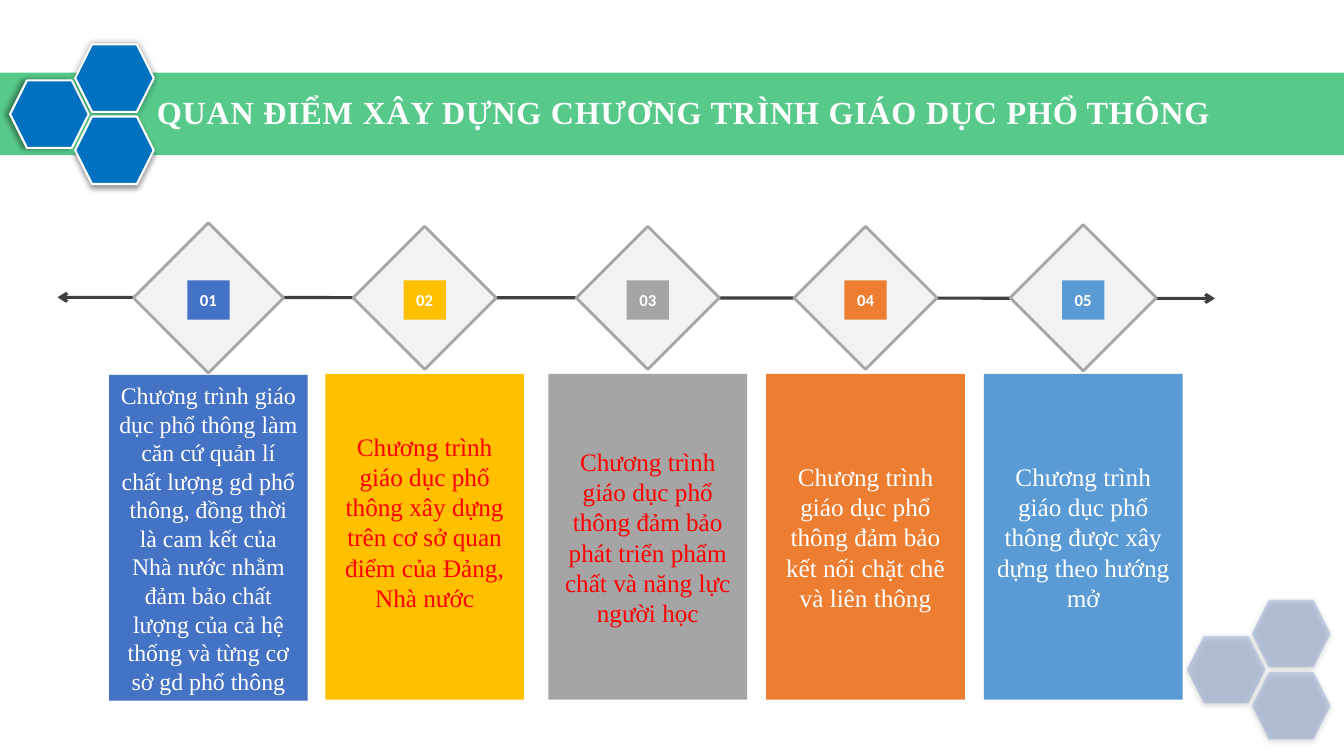
from dataclasses import dataclass
from typing import Optional

import lxml.etree
import pptx
import pptx.dml.color
import pptx.enum.shapes
import pptx.enum.text
import pptx.oxml.ns
import pptx.util

RGB = pptx.dml.color.RGBColor
SHAPE = pptx.enum.shapes.MSO_SHAPE
qn = pptx.oxml.ns.qn

WHITE = RGB(0xFF, 0xFF, 0xFF)
TITLE_WHITE = RGB(0xFE, 0xFE, 0xFE)
RED = RGB(0xFF, 0x00, 0x00)
GREEN = RGB(0x00, 0xB0, 0x50)
HEXAGON_BLUE = RGB(0x00, 0x70, 0xC0)
BLUE = RGB(0x44, 0x72, 0xC4)
GOLD = RGB(0xFF, 0xC0, 0x00)
GRAY = RGB(0xA5, 0xA5, 0xA5)
ORANGE = RGB(0xED, 0x7D, 0x31)
SKY = RGB(0x5B, 0x9B, 0xD5)
PALE = RGB(0xF2, 0xF2, 0xF2)
EDGE = RGB(0xA6, 0xA6, 0xA6)
DARK = RGB(0x40, 0x40, 0x40)

SERIF = "Times New Roman"
SANS = "Calibri"
WIDTH = pptx.util.Inches(13.33)
HEIGHT = pptx.util.Inches(7.5)


@dataclass
class Box:
    """Left, top, width and height in percent of the slide."""
    left: float
    top: float
    width: float
    height: float

    def emu(self) -> tuple[int, int, int, int]:
        return across(self.left), down(self.top), across(self.width), down(self.height)


@dataclass
class Shadow:
    alpha: int
    blur: float
    distance: float
    angle: int


@dataclass
class Hexagon:
    column: int
    row: int
    shadow: Shadow


@dataclass
class Step:
    center: float
    diamond: float
    color: RGB
    text: str
    text_color: RGB = WHITE
    size: int = 18
    top: float = 49.47
    bottom_inset: float = 0.05


SOFT = Shadow(63, 4.5, 1.5, 90)
HEADER_HEXAGONS = [
    Hexagon(0, 1, Shadow(40, 4, 3, 180)),
    Hexagon(1, 0, Shadow(40, 5, 0, 0)),
    Hexagon(1, 2, Shadow(40, 4, 3, 90)),
]
CORNER_HEXAGONS = [Hexagon(0, 1, SOFT), Hexagon(1, 0, SOFT), Hexagon(1, 2, SOFT)]

STEPS = [
    Step(15.51, 11.18, BLUE,
         "Chương trình giáo dục phổ thông làm căn cứ quản lí chất lượng gd phổ thông, "
         "đồng thời là cam kết của Nhà nước nhằm đảm bảo chất lượng của cả hệ thống "
         "và từng cơ sở gd phổ thông", size=17, top=49.6),
    Step(31.6, 10.65, GOLD,
         "Chương trình giáo dục phổ thông xây dựng trên cơ sở quan điểm của Đảng, Nhà nước",
         RED, bottom_inset=0.35),
    Step(48.2, 10.65, GRAY,
         "Chương trình giáo dục phổ thông đảm bảo phát triển phẩm chất và năng lực người học",
         RED),
    Step(64.4, 10.65, ORANGE,
         "Chương trình giáo dục phổ thông đảm bảo kết nối chặt chẽ và liên thông"),
    Step(80.6, 10.88, SKY,
         "Chương trình giáo dục phổ thông được xây dựng theo hướng mở"),
]


def across(percent: float) -> int:
    return round(WIDTH * percent / 100)


def down(percent: float) -> int:
    return round(HEIGHT * percent / 100)


def centered(x: float, y: float, width: float, height: float) -> Box:
    return Box(x - width / 2, y - height / 2, width, height)


def add_shape(shapes, kind, box: Box, fill: RGB, alpha: int = 100,
              line: Optional[RGB] = None, weight: float = 0):
    sp = shapes.add_shape(kind, *box.emu())
    sp.shadow.inherit = False
    sp.fill.solid()
    sp.fill.fore_color.rgb = fill
    if alpha < 100:
        color = sp._element.spPr.find(qn("a:solidFill")).find(qn("a:srgbClr"))
        lxml.etree.SubElement(color, qn("a:alpha"), val=str(alpha * 1000))
    if line is None:
        sp.line.fill.background()
    else:
        sp.line.color.rgb = line
        sp.line.width = pptx.util.Pt(weight)
    return sp


def add_shadow(sp, shadow: Shadow) -> None:
    effects = sp._element.spPr.find(qn("a:effectLst"))
    outer = lxml.etree.SubElement(
        effects, qn("a:outerShdw"), blurRad=str(pptx.util.Pt(shadow.blur)),
        dist=str(pptx.util.Pt(shadow.distance)), dir=str(shadow.angle * 60000),
        rotWithShape="0")
    color = lxml.etree.SubElement(outer, qn("a:srgbClr"), val="000000")
    lxml.etree.SubElement(color, qn("a:alpha"), val=str(shadow.alpha * 1000))


def write(sp, text: str, font: str, size: int, color: RGB,
          bold: bool = False, wrap: bool = True):
    tf = sp.text_frame
    tf.word_wrap = wrap
    tf.vertical_anchor = pptx.enum.text.MSO_ANCHOR.MIDDLE
    p = tf.paragraphs[0]
    p.alignment = pptx.enum.text.PP_ALIGN.CENTER
    p.add_run().text = text
    p.font.name = font
    p.font.size = pptx.util.Pt(size)
    p.font.bold = bold
    p.font.color.rgb = color
    return tf


def add_cluster(s, left: float, top: float, hexagons: list[Hexagon], fill: RGB,
                alpha: int = 100, line: Optional[RGB] = None) -> None:
    group = s.shapes.add_group_shape()
    for h in hexagons:
        box = Box(left + h.column * 4.84, top + h.row * 4.77, 5.85, 8.93)
        sp = add_shape(group.shapes, SHAPE.HEXAGON, box, fill, alpha, line, 1.5)
        add_shadow(sp, h.shadow)


def add_title(s) -> None:
    sp = s.shapes.add_textbox(*Box(10.58, 11.47, 80.65, 6.53).emu())
    tf = write(sp, "QUAN ĐIỂM XÂY DỰNG CHƯƠNG TRÌNH GIÁO DỤC PHỔ THÔNG",
               SERIF, 23, TITLE_WHITE, bold=True, wrap=False)
    tf.auto_size = pptx.enum.text.MSO_AUTO_SIZE.SHAPE_TO_FIT_TEXT
    for r in tf.paragraphs[0].runs:
        r._r.get_or_add_rPr().set("spc", "50")


def add_axis(s) -> None:
    line = s.shapes.add_connector(
        pptx.enum.shapes.MSO_CONNECTOR.STRAIGHT,
        across(4.28), down(39.33), across(90.4), down(39.47))
    line.line.color.rgb = DARK
    line.line.width = pptx.util.Pt(2.25)
    ln = line.line._get_or_add_ln()
    for end in ("a:headEnd", "a:tailEnd"):
        lxml.etree.SubElement(ln, qn(end), type="arrow")
    lxml.etree.SubElement(line._element.spPr, qn("a:effectLst"))


def add_step(s, number: int, step: Step) -> None:
    diamond = centered(step.center, 39.4, step.diamond, step.diamond * WIDTH / HEIGHT)
    add_shape(s.shapes, SHAPE.DIAMOND, diamond, PALE, line=EDGE, weight=2)
    badge = add_shape(s.shapes, SHAPE.RECTANGLE,
                      centered(step.center, 39.67, 3.15, 5.2), step.color)
    write(badge, f"{number:02}", SANS, 12, WHITE, bold=True)
    card = add_shape(s.shapes, SHAPE.RECTANGLE,
                     Box(step.center - 7.39, step.top, 14.78, 43.07), step.color)
    tf = write(card, step.text, SERIF, step.size, step.text_color)
    tf.margin_bottom = pptx.util.Inches(step.bottom_inset)


def main() -> None:
    prs = pptx.Presentation()
    prs.slide_width, prs.slide_height = WIDTH, HEIGHT
    s = prs.slides.add_slide(prs.slide_layouts[6])
    add_shape(s.shapes, SHAPE.RECTANGLE, Box(0, 9.6, 100, 10.93), GREEN, alpha=66)
    add_cluster(s, 0.75, 5.87, HEADER_HEXAGONS, HEXAGON_BLUE, line=WHITE)
    add_cluster(s, 88.3, 79.33, CORNER_HEXAGONS, BLUE, alpha=26)
    add_title(s)
    add_axis(s)
    for number, step in enumerate(STEPS, 1):
        add_step(s, number, step)
    prs.save("out.pptx")


if __name__ == "__main__":
    main()
